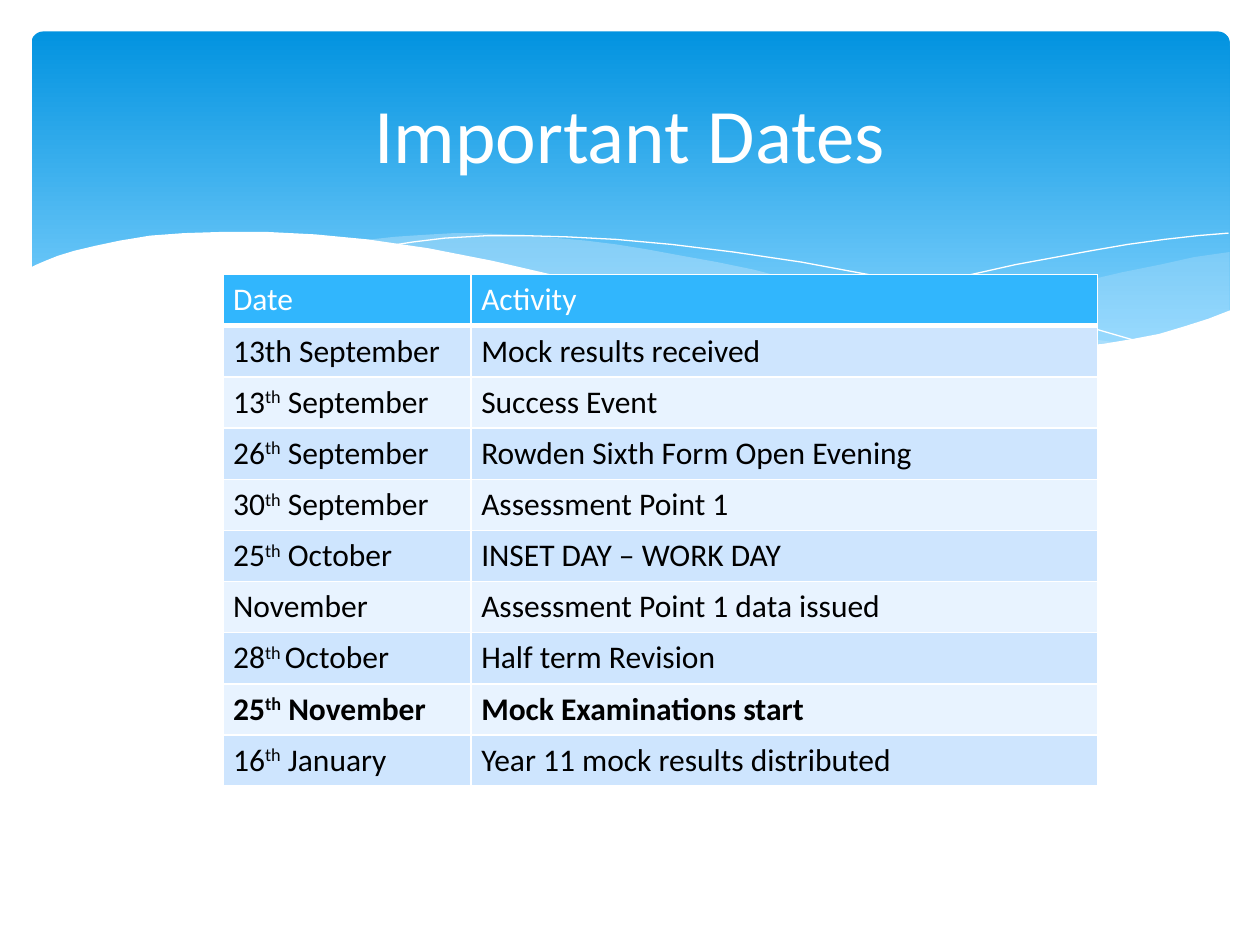
from lxml import etree
from pptx import Presentation
from pptx.dml.color import RGBColor
from pptx.enum.shapes import MSO_SHAPE
from pptx.enum.text import MSO_ANCHOR, PP_ALIGN
from pptx.oxml import parse_xml
from pptx.oxml.ns import nsdecls, qn
from pptx.util import Inches, Pt

ROUNDED = MSO_SHAPE.ROUNDED_RECTANGLE
MIDDLE = MSO_ANCHOR.MIDDLE
CENTER = PP_ALIGN.CENTER
COLS, ROWS = 1000, 750
CELL = Inches(10) // COLS
WHITE, BLACK, MIST = "FFFFFF", "000000", "C6E7FC"
HEADER, BANDS = "31B6FD", ("CEE5FE", "E8F3FF")
TITLE_FONT = {"name": "Calibri", "size": Pt(44), "bold": False}
CELL_FONT = {"name": "Calibri", "size": Pt(18)}
CELL_MARGINS = {
    "margin_left": 8 * CELL, "margin_right": 8 * CELL,
    "margin_top": 5 * CELL, "margin_bottom": 5 * CELL,
}

RIGHT_WAVE = [
    (976, 200), (948, 204), (921, 210), (891, 216), (861, 223), (805, 237),
    (753, 248), (706, 257), (661, 265), (691, 269), (719, 272), (745, 275),
    (769, 277), (803, 278), (835, 277), (863, 275), (889, 272), (913, 267),
    (935, 262), (949, 257), (963, 252), (976, 247),
]
MIDDLE_WAVE = [
    (893, 273), (866, 269), (837, 265), (807, 260), (775, 254), (741, 247),
    (706, 240), (668, 231), (629, 222), (598, 214), (569, 208), (541, 203),
    (514, 198), (489, 194), (465, 191), (442, 189), (420, 187), (399, 186),
    (380, 185), (361, 185), (344, 186), (328, 187), (313, 188), (286, 191),
    (323, 196), (362, 203), (404, 211), (449, 222), (491, 232), (530, 240),
    (566, 248), (601, 255), (634, 261), (665, 266), (695, 270), (722, 274),
    (748, 276), (773, 277), (807, 278), (838, 278), (867, 276), (893, 273),
]
LONG_CREST = [
    (309, 195), (328, 192), (353, 189), (387, 187), (416, 187), (450, 188),
    (489, 190), (533, 194), (582, 200), (636, 208), (695, 219), (760, 233),
    (831, 251), (869, 261), (907, 272),
]
SHORT_CREST = [
    (613, 257), (653, 246), (695, 235), (748, 223), (806, 210), (866, 199),
    (895, 194), (924, 190), (951, 187), (975, 185),
]
WHITE_WAVE = [
    (977, 246), (959, 253), (940, 259), (920, 265), (899, 269), (875, 273),
    (850, 275), (823, 277), (793, 276), (761, 275), (726, 272), (688, 268),
    (648, 262), (603, 254), (555, 245), (503, 233), (447, 220), (391, 207),
    (340, 197), (292, 190), (250, 186), (211, 184), (177, 184), (146, 185),
    (119, 187), (95, 191), (76, 195), (59, 199), (46, 203), (36, 207),
    (29, 210), (23, 213), (23, 329), (977, 329),
]
SCHEDULE = [
    ("Date", "Activity"),
    ("13th September", "Mock results received"),
    ("13^th^ September", "Success Event"),
    ("26^th^ September", "Rowden Sixth Form Open Evening"),
    ("30^th^ September", "Assessment Point 1"),
    ("25^th^ October", "INSET DAY – WORK DAY"),
    ("November", "Assessment Point 1 data issued"),
    ("28^th ^October", "Half term Revision"),
    ("25^th^ November", "Mock Examinations start"),
    ("16^th^ January", "Year 11 mock results distributed"),
]
BOLD_ROW = 8


def rgb(value):
    return RGBColor.from_string(value)


def grid(*cells):
    return [c * CELL for c in cells]


def apply(target, values):
    for key, value in values.items():
        setattr(target, key, value)


def add_banner(s):
    sp = s.shapes.add_shape(ROUNDED, *grid(25, 25, 951, 270))
    sp.adjustments[0] = 0.034
    sp.shadow.inherit = False
    sp.line.fill.background()
    sp.fill.gradient()
    sp.fill.gradient_angle = 270
    stops = sp.fill.gradient_stops
    for stop, position, color in zip(stops, (0, 0.9), ("0293E0", "83D3FE")):
        stop.position = position
        stop.color.rgb = rgb(color)


def add_outline(s, points, close):
    start, *rest = [grid(*point) for point in points]
    builder = s.shapes.build_freeform(*start)
    builder.add_line_segments(rest, close=close)
    sp = builder.convert_to_shape()
    sp.shadow.inherit = False
    return sp


def add_wave(s, points, color, opacity=100):
    sp = add_outline(s, points, True)
    sp.line.fill.background()
    sp.fill.solid()
    sp.fill.fore_color.rgb = rgb(color)
    if opacity < 100:
        clr = sp.element.spPr.find(qn("a:solidFill"))[0]
        etree.SubElement(clr, qn("a:alpha")).set("val", str(opacity * 1000))


def add_crest(s, points):
    sp = add_outline(s, points, False)
    sp.fill.background()
    sp.line.color.rgb = rgb(WHITE)
    sp.line.width = 0


def add_title(s, text):
    sp = s.shapes.title
    s.shapes.element.append(sp.element)
    sp.left, sp.top, sp.width, sp.height = grid(50, 37, 900, 137)
    tf = sp.text_frame
    tf.vertical_anchor = MIDDLE
    p = tf.paragraphs[0]
    p.alignment = CENTER
    r = p.add_run()
    r.text = text
    apply(r.font, TITLE_FONT)
    r.font.color.rgb = rgb(WHITE)


def set_borders(cell, bottom):
    tcPr = cell._tc.get_or_add_tcPr()
    for side, width in (("L", 1), ("R", 1), ("T", 1), ("B", bottom)):
        tcPr.append(parse_xml(
            f'<a:ln{side} {nsdecls("a")} w="{Pt(width)}"><a:solidFill>'
            f'<a:srgbClr val="{WHITE}"/></a:solidFill></a:ln{side}>'))


def fill_cell(cell, text, fill, color, bold, bottom):
    set_borders(cell, bottom)
    apply(cell, CELL_MARGINS)
    cell.fill.solid()
    cell.fill.fore_color.rgb = rgb(fill)
    p = cell.text_frame.paragraphs[0]
    for i, part in enumerate(text.split("^")):
        r = p.add_run()
        r.text = part
        apply(r.font, CELL_FONT)
        r.font.bold = bold
        r.font.color.rgb = rgb(color)
        if i % 2:
            r._r.get_or_add_rPr().set("baseline", "30000")


def add_schedule(s, rows):
    frame = s.shapes.add_table(len(rows), 2, *grid(177, 218, 694, 406))
    table = frame.table
    table.horz_banding = False
    for column, width in zip(table.columns, grid(197, 497)):
        column.width = width
    for i, row in enumerate(rows):
        fill = BANDS[(i - 1) % 2] if i else HEADER
        color = BLACK if i else WHITE
        for j, text in enumerate(row):
            fill_cell(table.cell(i, j), text, fill, color,
                      i == BOLD_ROW, 1 if i else 3)


def main():
    prs = Presentation()
    prs.slide_width, prs.slide_height = grid(COLS, ROWS)
    s = prs.slides.add_slide(prs.slide_layouts[5])
    add_banner(s)
    add_wave(s, RIGHT_WAVE, MIST, 29)
    add_wave(s, MIDDLE_WAVE, MIST, 40)
    add_crest(s, LONG_CREST)
    add_crest(s, SHORT_CREST)
    add_wave(s, WHITE_WAVE, WHITE)
    add_title(s, "Important Dates")
    add_schedule(s, SCHEDULE)
    prs.save("out.pptx")


if __name__ == "__main__":
    main()
